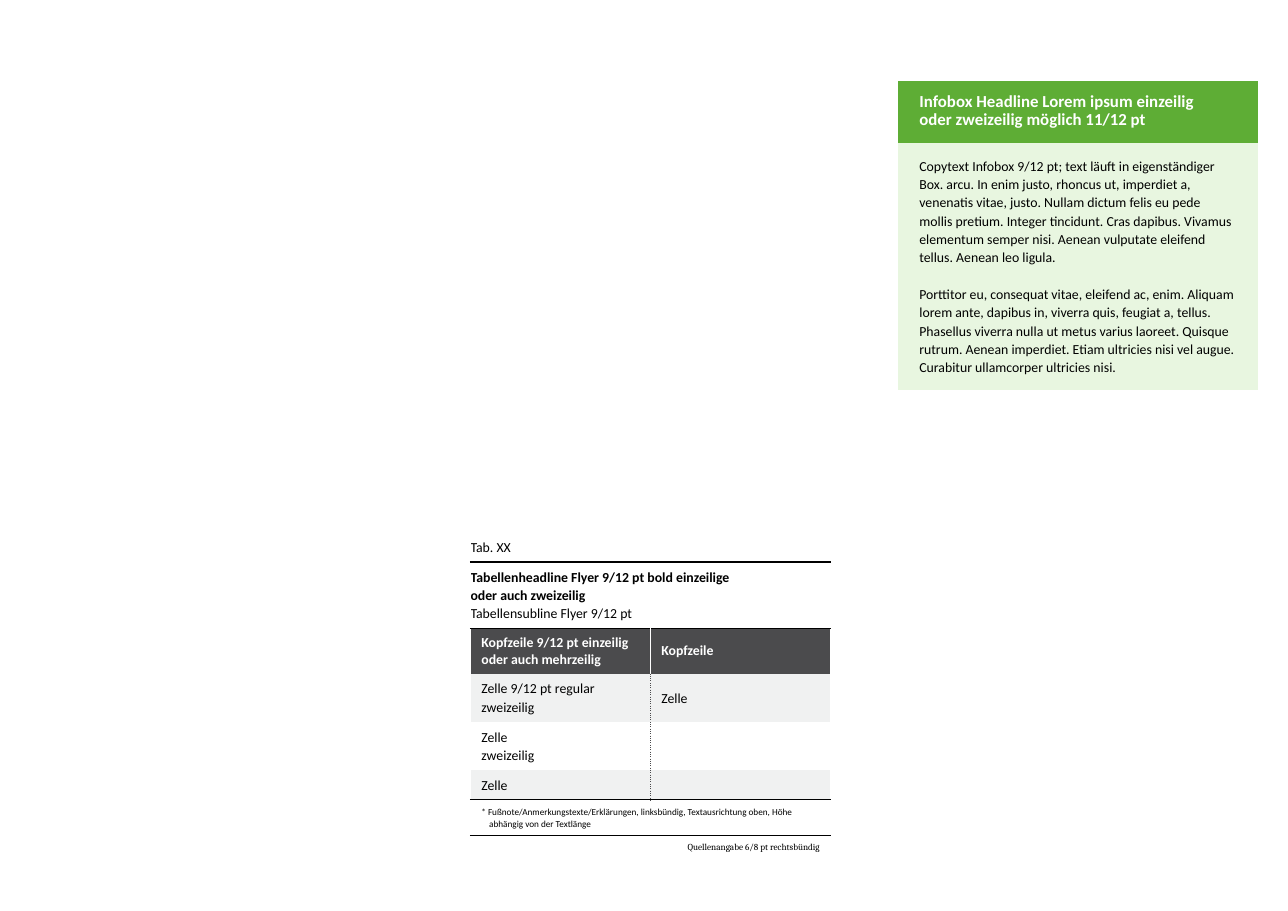
from pptx import Presentation
from pptx.dml.color import RGBColor
from pptx.enum.text import MSO_ANCHOR as Anchor, PP_ALIGN as Align
from pptx.oxml import parse_xml
from pptx.oxml.ns import nsdecls
from pptx.util import Cm, Pt

BLACK, WHITE, DARK, PALE = "000000", "FFFFFF", "4B4B4D", "F0F1F1"
GREEN, LIGHT_GREEN = "5EAD35", "E8F6E0"
NO_STYLE = "{2D5ABB26-0587-4C30-8999-92F81FD0307C}"
WHITE_EDGE, BLACK_RULE, THIN_RULE = (WHITE, 1), (BLACK, 1), (BLACK, 0.5)
HEADER_DIVIDER, DOTTED_DIVIDER = (WHITE, 0.75), (DARK, 0.5, "sysDot")


def rgb(value):
    return RGBColor.from_string(value)


class FlyerSlide:
    """Builds styled tables on one flyer slide."""

    font = "Calibri"

    def __init__(self, presentation):
        self.slide = presentation.slides.add_slide(presentation.slide_layouts[6])

    def table(self, left, top, column_widths, row_heights):
        frame = self.slide.shapes.add_table(
            len(row_heights), len(column_widths), Cm(left), Cm(top),
            Cm(sum(column_widths)), Cm(sum(row_heights)))
        table = frame.table
        table.first_row = table.horz_banding = False
        frame.element.xpath(".//a:tableStyleId")[0].text = NO_STYLE
        for column, width in zip(table.columns, column_widths):
            column.width = Cm(width)
        for row, height in zip(table.rows, row_heights):
            row.height = Cm(height)
        return table

    def cell(self, cell, lines, fill=None, anchor=Anchor.TOP, margins=(0.25, 0.13),
             borders=None, **style):
        cell.margin_left = cell.margin_right = Cm(margins[0])
        cell.margin_top = cell.margin_bottom = Cm(margins[1])
        cell.vertical_anchor = anchor
        if fill:
            cell.fill.solid()
            cell.fill.fore_color.rgb = rgb(fill)
        else:
            cell.fill.background()
        self.borders(cell, borders or {})
        cell.text_frame.text = "\n".join(lines)
        for paragraph in cell.text_frame.paragraphs:
            self.format(paragraph, **style)

    def format(self, paragraph, size=9, color=BLACK, bold=False, spacing=12,
               font=None, align=Align.LEFT):
        paragraph.alignment = align
        if spacing:
            paragraph.line_spacing = Pt(spacing)
        paragraph.font.name = font or self.font
        paragraph.font.size = Pt(size)
        paragraph.font.bold = bold
        paragraph.font.color.rgb = rgb(color)

    def borders(self, cell, borders):
        properties = cell._tc.get_or_add_tcPr()
        sides = [side for side in "LRTB" if side in borders]
        for position, side in enumerate(sides):
            color, width, dash = (*borders[side], "solid")[:3]
            properties.insert(position, parse_xml(
                f'<a:ln{side} {nsdecls("a")} w="{Pt(width)}"><a:solidFill>'
                f'<a:srgbClr val="{color}"/></a:solidFill>'
                f'<a:prstDash val="{dash}"/></a:ln{side}>'))

    def full_row(self, table, row, lines, top=None, bottom=None, **style):
        left, right = table.cell(row, 0), table.cell(row, 1)
        left.merge(right)
        edges = {"L": WHITE_EDGE, "R": WHITE_EDGE}
        edges |= {side: rule for side, rule in (("T", top), ("B", bottom)) if rule}
        self.cell(left, lines, borders=edges, **style)
        self.borders(right, edges)

    def split_row(self, table, row, texts, divider, bottom=None, **style):
        for column, lines in enumerate(texts):
            edges = {"L": divider if column else WHITE_EDGE,
                     "R": WHITE_EDGE if column else divider}
            if bottom:
                edges["B"] = bottom
            self.cell(table.cell(row, column), lines, anchor=Anchor.MIDDLE,
                      borders=edges, **style)


def add_data_table(flyer):
    table = flyer.table(10.85, 12.27, [4.15, 4.15],
                        [0.67, 1.54, 1.02, 1.11, 1.11, 0.67, 0.81, 0.54])
    flyer.full_row(table, 0, ["Tab. XX"], top=WHITE_EDGE, bottom=BLACK_RULE,
                   margins=(0, 0.13))
    flyer.full_row(table, 1, ["Tabellenheadline Flyer 9/12 pt bold einzeilige",
                              "oder auch zweizeilig", "Tabellensubline Flyer 9/12 pt"],
                   top=BLACK_RULE, margins=(0, 0.13), bold=True)
    table.cell(1, 0).text_frame.paragraphs[-1].font.bold = False

    headings = [["Kopfzeile 9/12 pt einzeilig", "oder auch mehrzeilig"], ["Kopfzeile"]]
    flyer.split_row(table, 2, headings, HEADER_DIVIDER, fill=DARK, color=WHITE,
                    bold=True, spacing=None)
    body = [([["Zelle 9/12 pt regular", "zweizeilig"], ["Zelle"]], PALE, None),
            ([["Zelle", "zweizeilig"], []], WHITE, None),
            ([["Zelle"], []], PALE, THIN_RULE)]
    for row, (texts, fill, bottom) in enumerate(body, start=3):
        flyer.split_row(table, row, texts, DOTTED_DIVIDER, bottom, fill=fill)

    flyer.full_row(table, 6, ["* Fußnote/Anmerkungstexte/Erklärungen, linksbündig, "
                              "Textausrichtung oben, Höhe abhängig von der Textlänge"],
                   top=THIN_RULE, bottom=BLACK_RULE, size=6, spacing=8)
    footnote = table.cell(6, 0).text_frame.paragraphs[0]._p.get_or_add_pPr()
    footnote.set("marL", str(Cm(0.18)))
    footnote.set("indent", str(-Cm(0.18)))
    flyer.full_row(table, 7, ["Quellenangabe 6/8 pt rechtsbündig"], top=BLACK_RULE,
                   size=6, spacing=8, font="Cambria", align=Align.RIGHT)


def add_infobox(flyer):
    infobox = flyer.table(20.7, 1.86, [8.3], [1.43, 5.69])
    flyer.cell(infobox.cell(0, 0), ["Infobox Headline Lorem ipsum einzeilig",
                                    "oder zweizeilig möglich 11/12 pt"],
               fill=GREEN, anchor=Anchor.MIDDLE, margins=(0.5, 0.3),
               size=11, color=WHITE, bold=True)
    flyer.cell(infobox.cell(1, 0), [
        "Copytext Infobox 9/12 pt; text läuft in eigenständiger Box. arcu. In enim justo, "
        "rhoncus ut, imperdiet a, venenatis vitae, justo. Nullam dictum felis eu pede "
        "mollis pretium. Integer tincidunt. Cras dapibus. Vivamus elementum semper nisi. "
        "Aenean vulputate eleifend tellus. Aenean leo ligula.",
        "Porttitor eu, consequat vitae, eleifend ac, enim. Aliquam lorem ante, dapibus in, "
        "viverra quis, feugiat a, tellus. Phasellus viverra nulla ut metus varius laoreet. "
        "Quisque rutrum. Aenean imperdiet. Etiam ultricies nisi vel augue. Curabitur "
        "ullamcorper ultricies nisi."],
        fill=LIGHT_GREEN, margins=(0.5, 0.3))
    infobox.cell(1, 0).text_frame.paragraphs[1].space_before = Pt(12)


def main():
    presentation = Presentation()
    presentation.slide_width, presentation.slide_height = Cm(29.7), Cm(21)
    flyer = FlyerSlide(presentation)
    add_data_table(flyer)
    add_infobox(flyer)
    presentation.save("out.pptx")


if __name__ == "__main__":
    main()
